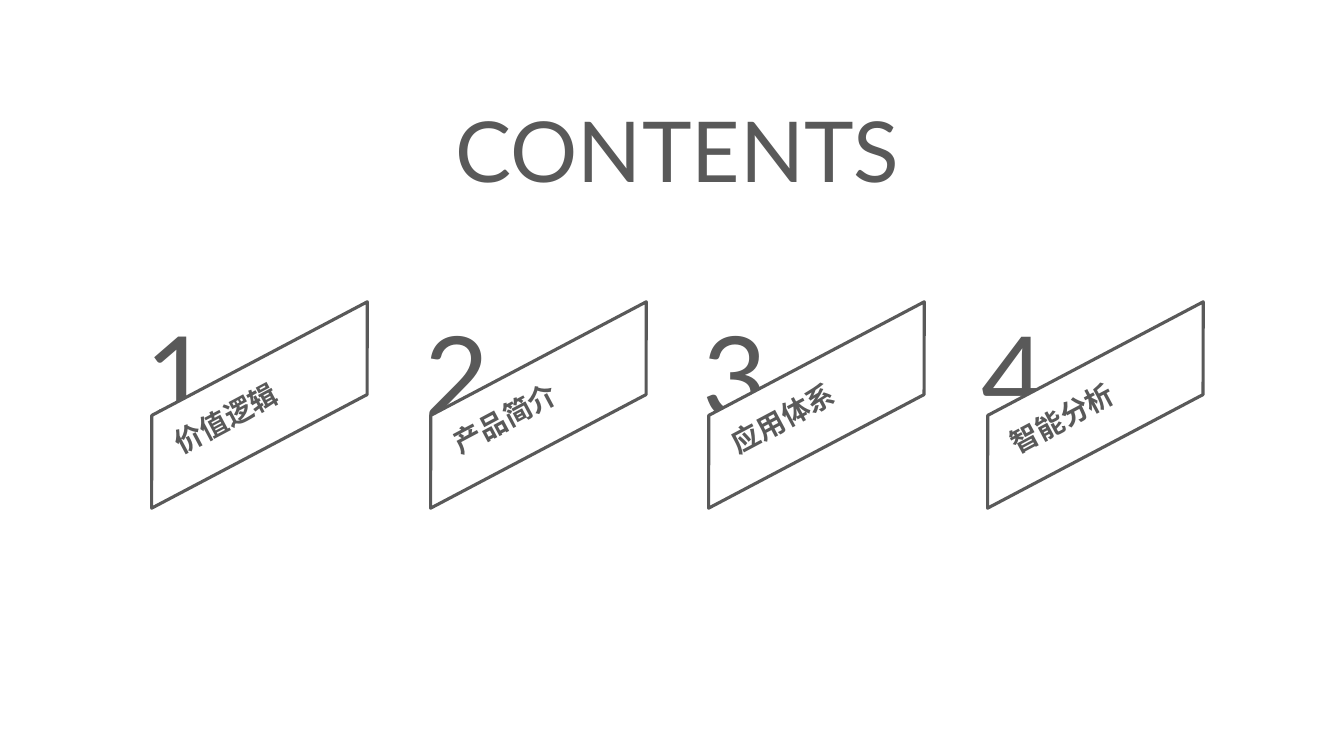
import pptx
import pptx.dml.color
import pptx.enum.shapes
import pptx.enum.text
import pptx.util

EMU_PER_PX = 914400 / 100.8
FONT = "Lato"
COLOURS = {"ink": "595959", "paper": "FFFFFF"}
ALIGN = pptx.enum.text.PP_ALIGN

SECTIONS = ["价值逻辑", "产品简介", "应用体系", "智能分析"]
FIRST_LEFT = 116
LAST_LEFT = 952


def px(length):
    return pptx.util.Emu(round(length * EMU_PER_PX))


def colour(name):
    return pptx.dml.color.RGBColor.from_string(COLOURS[name])


def write_text(box, text, size, align, bold=False):
    frame = box.text_frame
    frame.word_wrap = True
    frame.auto_size = pptx.enum.text.MSO_AUTO_SIZE.SHAPE_TO_FIT_TEXT
    frame.vertical_anchor = pptx.enum.text.MSO_ANCHOR.TOP
    para = frame.paragraphs[0]
    para.alignment = align
    span = para.add_run()
    span.text = text
    span.font.name = FONT
    span.font.size = pptx.util.Pt(size)
    span.font.bold = bold
    span.font.color.rgb = colour("ink")


def add_title(page, text):
    title = page.shapes.title
    title.left, title.top = px(386), px(93)
    title.width, title.height = px(583), px(112)
    write_text(title, text, 60, ALIGN.CENTER)


def add_number(page, left, number):
    box = page.shapes.add_textbox(px(left), px(301), px(117), px(146))
    write_text(box, str(number), 80, ALIGN.CENTER)


def add_banner(page, left):
    banner = page.shapes.add_shape(
        pptx.enum.shapes.MSO_SHAPE.PARALLELOGRAM, px(left), px(364), px(287), px(82))
    banner.adjustments[0] = 0.53
    banner.rotation = 332.2
    banner.shadow.inherit = False
    banner.fill.solid()
    banner.fill.fore_color.rgb = colour("paper")
    banner.line.color.rgb = colour("ink")
    banner.line.width = pptx.util.Pt(2.25)


def add_label(page, left, text):
    box = page.shapes.add_textbox(px(left), px(380), px(201), px(44))
    box.rotation = 332
    write_text(box, text, 20, ALIGN.JUSTIFY, bold=True)


def add_section(page, left, number, text):
    """Add a number half hidden behind a slanted, labelled banner."""
    add_number(page, left + 4, number)
    add_banner(page, left)
    add_label(page, left + 40, text)


def main():
    deck = pptx.Presentation()
    deck.slide_width, deck.slide_height = px(1344), px(756)
    page = deck.slides.add_slide(deck.slide_layouts.get_by_name("Title Only"))
    add_title(page, "CONTENTS")
    pitch = (LAST_LEFT - FIRST_LEFT) / (len(SECTIONS) - 1)
    for index, text in enumerate(SECTIONS):
        add_section(page, round(FIRST_LEFT + index * pitch), index + 1, text)
    deck.save("out.pptx")


if __name__ == "__main__":
    main()
